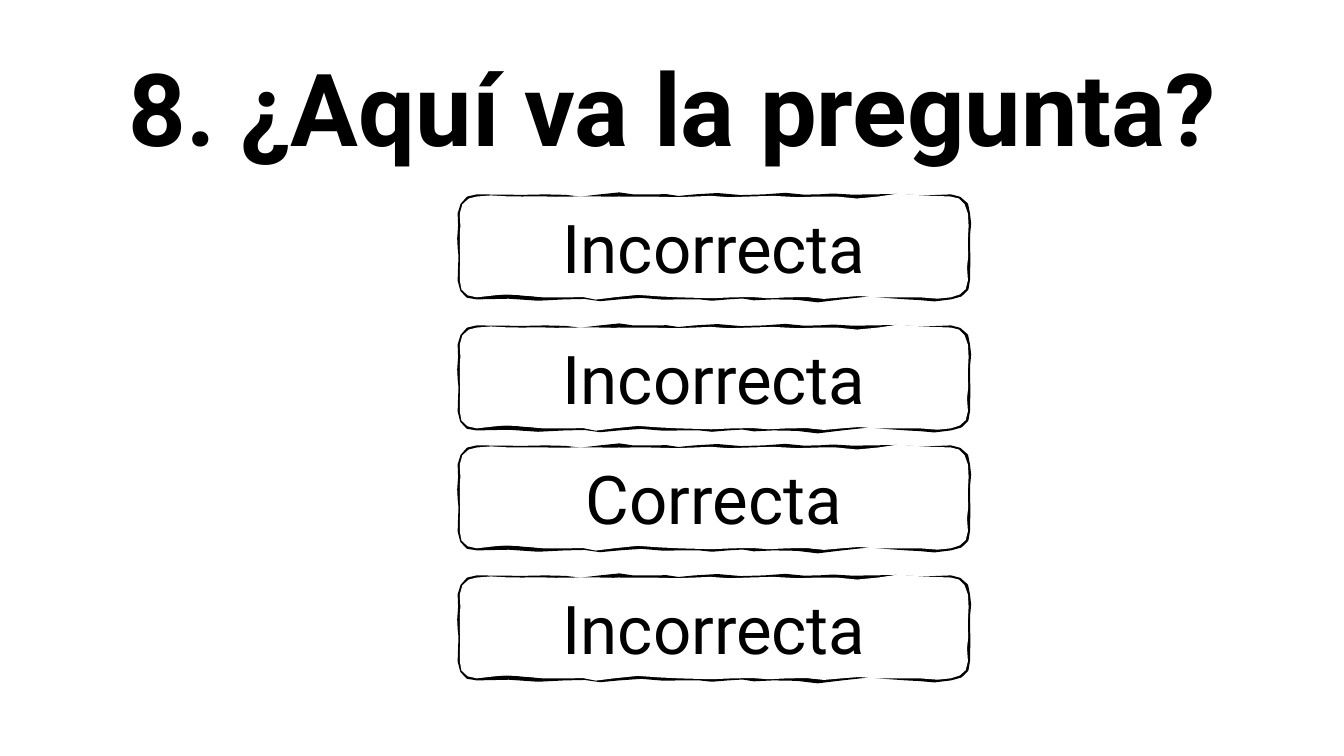
from pptx import Presentation
from pptx.dml.color import RGBColor
from pptx.enum.text import MSO_ANCHOR, PP_ALIGN
from pptx.util import Inches, Pt

MIDDLE = MSO_ANCHOR.MIDDLE
CENTER = PP_ALIGN.CENTER
FONT = "Roboto"
COLORS = {"ink": "000000", "paper": "FFFFFF"}
STEPS = 3

ANSWER_LEFT = 4.56
ANSWERS = [(1.95, "Incorrecta"), (3.25, "Incorrecta"), (4.44, "Correcta"), (5.73, "Incorrecta")]

# Both edges start here; each row holds two control points and an end point.
EDGE_START = (0, 0.17)
STROKE_CURVES = [
    (0.01, 0.08, 0.07, -0.01, 0.17, 0), (0.45, 0, 0.6, 0.01, 0.85, 0),
    (1.1, -0.02, 1.15, 0.06, 1.39, 0), (1.64, -0.06, 1.67, 0.03, 1.89, 0),
    (2.1, -0.03, 2.12, 0.05, 2.33, 0), (2.55, -0.05, 2.79, 0.04, 3.02, 0),
    (3.24, -0.05, 3.43, 0.03, 3.56, 0), (3.68, -0.03, 3.88, 0.02, 4.1, 0),
    (4.32, -0.03, 4.56, 0.04, 4.87, 0), (4.95, 0, 5.06, 0.07, 5.04, 0.17),
    (5.07, 0.28, 5.03, 0.34, 5.04, 0.49), (5.05, 0.64, 5.04, 0.68, 5.04, 0.83),
    (5.05, 0.93, 4.98, 0.99, 4.87, 1), (4.7, 1.05, 4.55, 0.99, 4.43, 1),
    (4.31, 1.01, 4.07, 0.93, 3.79, 1), (3.51, 1.08, 3.38, 0.97, 3.11, 1),
    (2.84, 1.04, 2.86, 0.96, 2.66, 1), (2.46, 1.04, 2.42, 0.98, 2.22, 1),
    (2.01, 1.03, 1.81, 0.95, 1.58, 1), (1.35, 1.06, 1.29, 0.96, 1.04, 1),
    (0.79, 1.05, 0.5, 0.96, 0.17, 1), (0.06, 1.01, 0.01, 0.94, 0, 0.83),
    (0, 0.68, 0.02, 0.58, 0, 0.51), (-0.02, 0.44, 0.02, 0.28, 0, 0.17),
]
FILL_CURVES = [
    (0, 0.06, 0.09, 0, 0.17, 0), (0.31, -0.03, 0.45, 0.01, 0.62, 0),
    (0.79, -0.01, 0.96, 0.01, 1.11, 0), (1.26, -0.01, 1.56, 0.01, 1.7, 0),
    (1.83, -0.01, 2.2, 0.02, 2.33, 0), (2.47, -0.03, 2.67, 0.03, 2.87, 0),
    (3.08, -0.03, 3.4, 0.03, 3.56, 0), (3.71, -0.03, 3.95, 0.06, 4.15, 0),
    (4.34, -0.07, 4.53, 0.01, 4.87, 0), (4.96, 0, 5.02, 0.06, 5.04, 0.17),
    (5.06, 0.28, 5.03, 0.44, 5.04, 0.51), (5.06, 0.59, 5.01, 0.69, 5.04, 0.83),
    (5.04, 0.94, 4.97, 0.98, 4.87, 1), (4.76, 1.04, 4.59, 0.98, 4.33, 1),
    (4.07, 1.02, 3.99, 0.96, 3.79, 1), (3.59, 1.05, 3.48, 0.97, 3.25, 1),
    (3.02, 1.03, 2.96, 0.98, 2.71, 1), (2.46, 1.02, 2.33, 1, 2.17, 1),
    (2, 1.01, 1.77, 0.94, 1.53, 1), (1.3, 1.07, 1.25, 0.96, 1.09, 1),
    (0.93, 1.05, 0.38, 0.9, 0.17, 1), (0.07, 1, -0.01, 0.94, 0, 0.83),
    (0, 0.7, 0.01, 0.62, 0, 0.49), (-0.01, 0.35, 0.02, 0.33, 0, 0.17),
]

deck = Presentation()
deck.slide_width = Inches(13.33)
deck.slide_height = Inches(7.5)
page = deck.slides.add_slide(deck.slide_layouts[6])


def add_wavy_box(top, curves):
    """Trace the Bézier curves in short straight steps as one closed shape."""
    points = [EDGE_START]
    for x1, y1, x2, y2, x3, y3 in curves:
        x0, y0 = points[-1]
        for step in range(1, STEPS + 1):
            t = step / STEPS
            a, b, c, d = (1 - t) ** 3, 3 * t * (1 - t) ** 2, 3 * t * t * (1 - t), t ** 3
            points.append((a * x0 + b * x1 + c * x2 + d * x3, a * y0 + b * y1 + c * y2 + d * y3))
    placed = [(Inches(ANSWER_LEFT + x), Inches(top + y)) for x, y in points[:-1]]
    builder = page.shapes.build_freeform(*placed[0])
    builder.add_line_segments(placed[1:], close=True)
    shape = builder.convert_to_shape()
    shape.shadow.inherit = False
    return shape


def set_text(box, text, size, bold=False):
    frame = box.text_frame
    frame.text = text
    frame.word_wrap = True
    frame.vertical_anchor = MIDDLE
    paragraph = frame.paragraphs[0]
    paragraph.alignment = CENTER
    font = paragraph.runs[0].font
    font.name = FONT
    font.size = Pt(size)
    font.bold = bold
    font.color.rgb = RGBColor.from_string(COLORS["ink"])


question = page.shapes.add_textbox(Inches(0.92), Inches(0.4), Inches(11.5), Inches(1.45))
set_text(question, "8. ¿Aquí va la pregunta?", 72, bold=True)
question.text_frame.paragraphs[0].line_spacing = 0.9

for top, answer in ANSWERS:
    stroke = add_wavy_box(top, STROKE_CURVES)
    stroke.fill.background()
    stroke.line.color.rgb = RGBColor.from_string(COLORS["ink"])
    stroke.line.width = Pt(3)

    # The white face covers part of the stroke, which gives the uneven line.
    face = add_wavy_box(top, FILL_CURVES)
    face.fill.solid()
    face.fill.fore_color.rgb = RGBColor.from_string(COLORS["paper"])
    face.line.fill.background()
    set_text(face, answer, 48)

deck.save("out.pptx")
